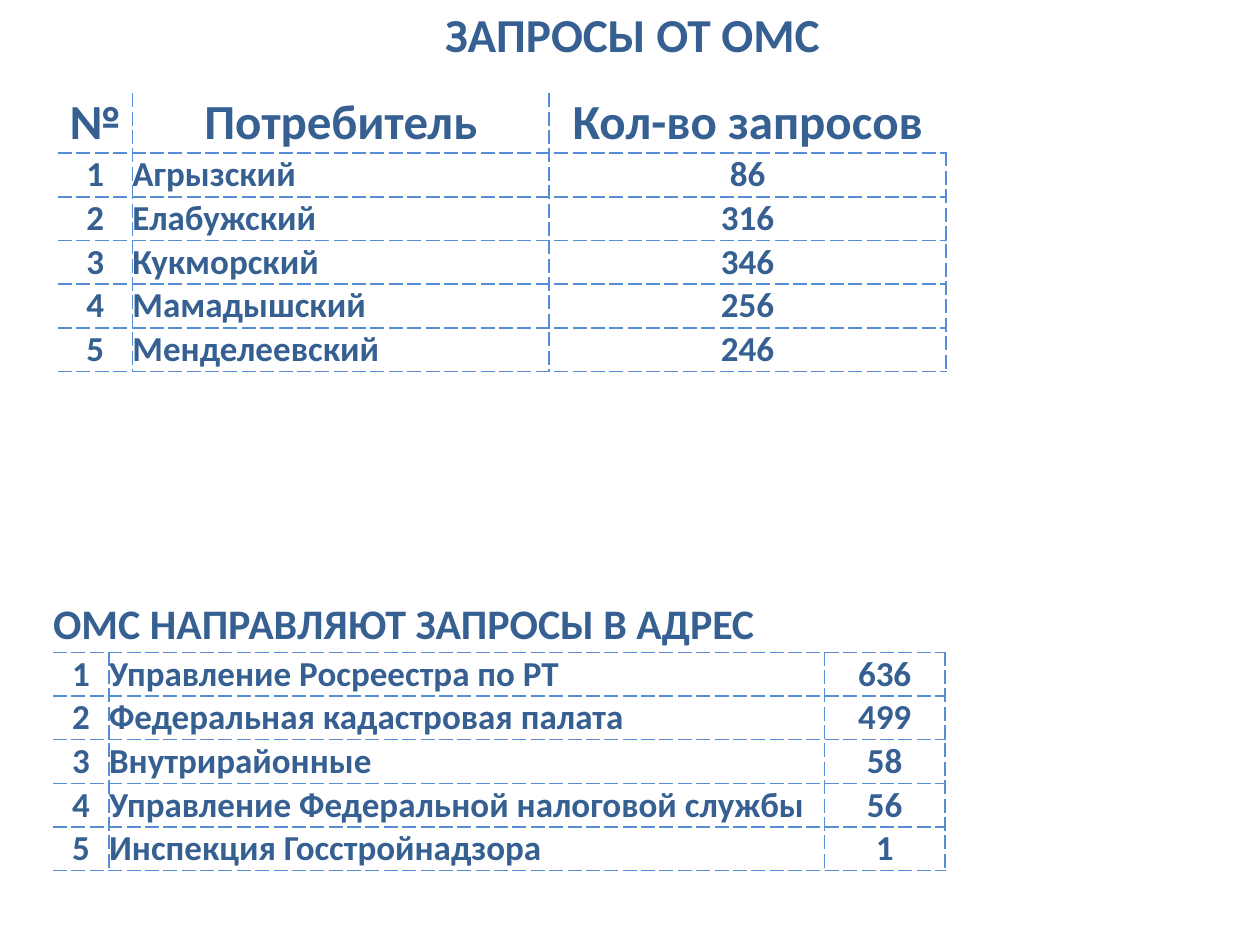
import pptx
import pptx.util
import pptx.dml.color
import pptx.enum.text
import pptx.oxml
import pptx.oxml.ns
from pptx.util import Cm

THEME = {
    "font": "Calibri", "ink": "376092", "line": "558ED5", "width": 1,
    "title": 27, "head": 28, "band": 24, "body": 20,
}
TITLE = "ЗАПРОСЫ ОТ ОМС"
TABLES = [
    {
        "left": 1.17, "top": 1.88, "cols": (1.5, 8.4, 8),
        "head": ("№", "Потребитель", "Кол-во запросов"), "high": 1.2,
        "rows": [
            ("Агрызский", 86),
            ("Елабужский", 316),
            ("Кукморский", 346),
            ("Мамадышский", 256),
            ("Менделеевский", 246),
        ],
    },
    {
        "left": 1.07, "top": 12.07, "cols": (1.13, 14.42, 2.43),
        "head": ("ОМС НАПРАВЛЯЮТ ЗАПРОСЫ В АДРЕС",), "high": 1.08,
        "rows": [
            ("Управление Росреестра по РТ", 636),
            ("Федеральная кадастровая палата", 499),
            ("Внутрирайонные", 58),
            ("Управление Федеральной налоговой службы", 56),
            ("Инспекция Госстройнадзора", 1),
        ],
    },
]
ROW = 0.88
ALIGN = pptx.enum.text.PP_ALIGN
MIDDLE = pptx.enum.text.MSO_ANCHOR.MIDDLE


def write(frame, text, size, align=ALIGN.CENTER):
    para = frame.paragraphs[0]
    para.alignment = align
    run = para.add_run()
    run.text = str(text)
    font = run.font
    font.name, font.size, font.bold = THEME["font"], pptx.util.Pt(size), True
    font.color.rgb = pptx.dml.color.RGBColor.from_string(THEME["ink"])


def edge(cell, sides):
    """Dash the given sides (of L, R, T, B) and clear the others."""
    props = cell._tc.get_or_add_tcPr()
    space = pptx.oxml.ns.nsdecls("a")
    wide = pptx.util.Pt(THEME["width"])
    dash = (f'<a:solidFill><a:srgbClr val="{THEME["line"]}"/></a:solidFill>'
            '<a:prstDash val="sysDash"/>')
    for side in "LRTB":
        inner = dash if side in sides else "<a:noFill/>"
        props.append(pptx.oxml.parse_xml(
            f'<a:ln{side} {space} w="{wide}">{inner}</a:ln{side}>'))


def sides(row, col, last, merged):
    """Outer left and top stay open, and so does the right of the header."""
    found = "B" if row == 0 else "TB"
    if row or not merged:
        found += "L" if col else ""
        found += "R" if row or col < last else ""
    return found


def draw(slide, data):
    head, cols = data["head"], data["cols"]
    merged = len(head) == 1
    grid = [head] + [(n, *row) for n, row in enumerate(data["rows"], 1)]
    highs = [data["high"]] + [ROW] * len(data["rows"])
    table = slide.shapes.add_table(
        len(grid), len(cols), Cm(data["left"]), Cm(data["top"]),
        Cm(sum(cols)), Cm(sum(highs))).table
    table.first_row = table.horz_banding = False
    for col, wide in zip(table.columns, cols):
        col.width = Cm(wide)
    for row, high in zip(table.rows, highs):
        row.height = Cm(high)
    if merged:
        table.cell(0, 0).merge(table.cell(0, len(cols) - 1))
    for r, line in enumerate(grid):
        for c in range(len(cols)):
            cell = table.cell(r, c)
            cell.margin_left = cell.margin_right = 0
            cell.margin_top = cell.margin_bottom = 0
            cell.vertical_anchor = MIDDLE
            edge(cell, sides(r, c, len(cols) - 1, merged))
            cell.fill.background()
            if c < len(line):
                size = "body" if r else "band" if merged else "head"
                flush = c == 1 if r else merged
                write(cell.text_frame, line[c], THEME[size],
                      align=ALIGN.LEFT if flush else ALIGN.CENTER)


def main():
    deck = pptx.Presentation()
    deck.slide_width, deck.slide_height = Cm(25.4), Cm(19.05)
    slide = deck.slides.add_slide(deck.slide_layouts[5])
    title = slide.shapes.title
    title.left, title.top = Cm(0.05), Cm(-0.03)
    title.width, title.height = Cm(25.4), Cm(1.42)
    title.text_frame.auto_size = pptx.enum.text.MSO_AUTO_SIZE.NONE
    title.text_frame.vertical_anchor = MIDDLE
    write(title.text_frame, TITLE, THEME["title"])
    for data in TABLES:
        draw(slide, data)
    deck.save("out.pptx")


if __name__ == "__main__":
    main()
